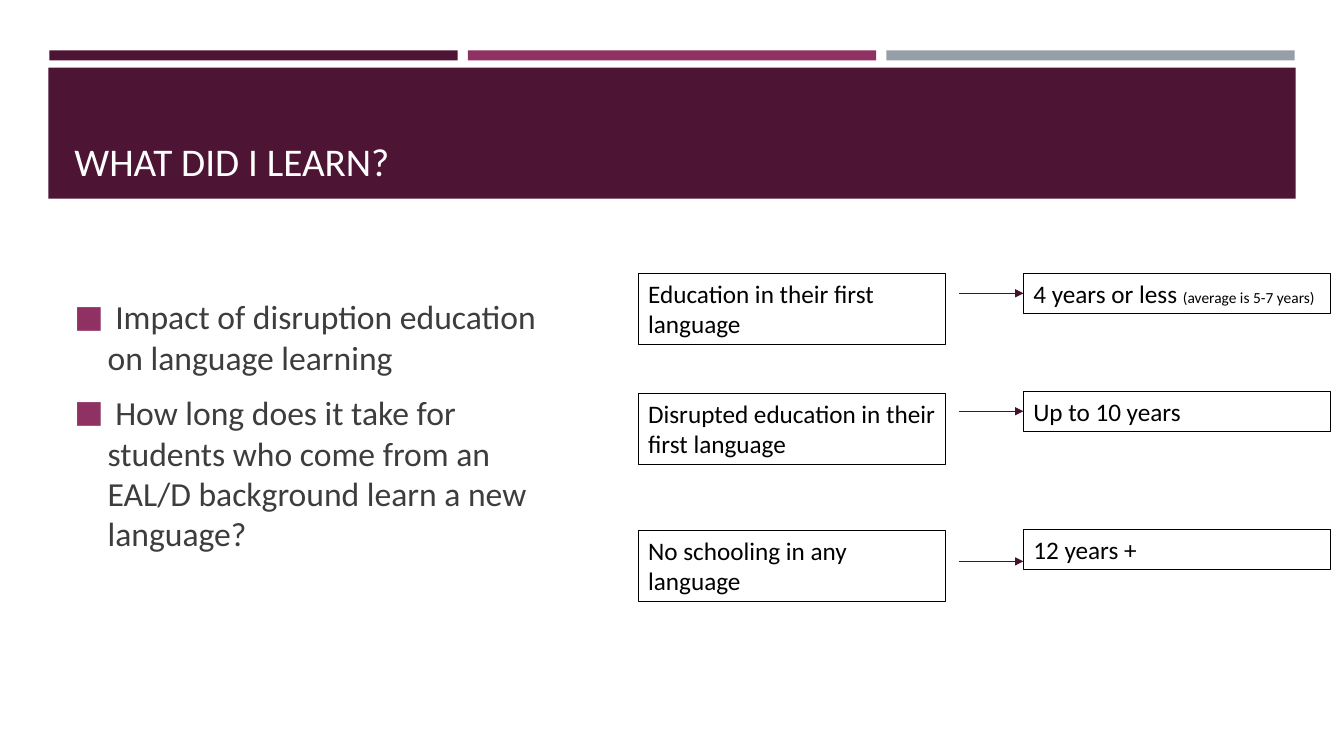
from lxml.etree import SubElement
from pptx import Presentation
from pptx.dml.color import RGBColor
from pptx.enum.shapes import MSO_CONNECTOR, MSO_SHAPE
from pptx.enum.text import MSO_ANCHOR, MSO_AUTO_SIZE, PP_ALIGN
from pptx.oxml.ns import qn
from pptx.util import Inches, Pt

FONT = "Calibri"
COLORS = {
    "plum": "4D1434",
    "magenta": "903163",
    "gray": "969FA7",
    "arrow": "45122F",
    "body": "3D3D3D",
    "black": "000000",
    "white": "FFFFFF",
}
STRIPES = ["plum", "magenta", "gray"]
BULLETS = [
    " Impact of disruption education on language learning",
    " How long does it take for students who come from an EAL/D background learn a new language?",
]
ROWS = [
    (2.71, "Education in their first language", 2.71,
     [("4 years or less ", 18), ("(average is 5-7 years)", 11)], 2.91),
    (3.9, "Disrupted education in their first language", 3.88,
     [("Up to 10 years", 18)], 4.08),
    (5.26, "No schooling in any language", 5.25, [("12 years +", 18)], 5.57),
]


def rgb(name):
    return RGBColor.from_string(COLORS[name])


def add_run(p, text, size, color):
    r = p.add_run()
    r.text = text
    r.font.name = FONT
    r.font.size = Pt(size)
    r.font.color.rgb = rgb(color)


def add_bar(s, x, y, w, h, color):
    sp = s.shapes.add_shape(MSO_SHAPE.RECTANGLE, Inches(x), Inches(y), Inches(w), Inches(h))
    sp.shadow.inherit = False
    sp.fill.solid()
    sp.fill.fore_color.rgb = rgb(color)
    sp.line.fill.background()


def add_text_area(s, x, y, w, h, anchor):
    tf = s.shapes.add_textbox(Inches(x), Inches(y), Inches(w), Inches(h)).text_frame
    tf.word_wrap = True
    tf.auto_size = MSO_AUTO_SIZE.NONE
    tf.vertical_anchor = anchor
    return tf


def add_bullet(p, text):
    p.space_before = Pt(4.8)
    p.space_after = Pt(6)
    pPr = p._p.get_or_add_pPr()
    pPr.set("marL", str(Inches(0.33)))
    pPr.set("indent", str(-Inches(0.33)))
    color = SubElement(pPr, qn("a:buClr"))
    SubElement(color, qn("a:srgbClr"), val=COLORS["magenta"])
    SubElement(pPr, qn("a:buSzPct"), val="92000")
    SubElement(pPr, qn("a:buFont"), typeface=FONT)
    SubElement(pPr, qn("a:buChar"), char="■")
    add_run(p, text, 24, "body")


def add_box(s, x, y, h, runs):
    sp = s.shapes.add_shape(MSO_SHAPE.RECTANGLE, Inches(x), Inches(y), Inches(3.05), Inches(h))
    sp.shadow.inherit = False
    sp.fill.background()
    sp.line.color.rgb = rgb("black")
    sp.line.width = Pt(0.75)
    tf = sp.text_frame
    tf.word_wrap = True
    tf.auto_size = MSO_AUTO_SIZE.SHAPE_TO_FIT_TEXT
    tf.vertical_anchor = MSO_ANCHOR.TOP
    p = tf.paragraphs[0]
    p.alignment = PP_ALIGN.LEFT
    for text, size in runs:
        add_run(p, text, size, "black")
    return sp


def add_arrow(s, y):
    line = s.shapes.add_connector(
        MSO_CONNECTOR.STRAIGHT, Inches(9.51), Inches(y), Inches(10.15), Inches(y))
    line.line.color.rgb = rgb("arrow")
    line.line.width = Pt(1)
    SubElement(line.line._get_or_add_ln(), qn("a:tailEnd"), type="triangle")
    SubElement(line._element.spPr, qn("a:effectLst"))
    return line


def main():
    prs = Presentation()
    prs.slide_width = Inches(13.33)
    prs.slide_height = Inches(7.5)
    s = prs.slides.add_slide(prs.slide_layouts[6])

    for i, color in enumerate(STRIPES):
        add_bar(s, 0.49 + 4.15 * i, 0.5, 4.05, 0.1, color)
    add_bar(s, 0.48, 0.67, 12.37, 1.3, "plum")

    title = add_text_area(s, 0.64, 0.77, 12.06, 1.11, MSO_ANCHOR.BOTTOM)
    add_run(title.paragraphs[0], "WHAT DID I LEARN?", 28, "white")

    body = add_text_area(s, 0.64, 2.02, 4.93, 4.39, MSO_ANCHOR.MIDDLE)
    for i, text in enumerate(BULLETS):
        add_bullet(body.add_paragraph() if i else body.paragraphs[0], text)

    for cause_y, cause, time_y, time_runs, arrow_y in ROWS:
        add_box(s, 6.33, cause_y, 0.71, [(cause, 18)])
        time_box = add_box(s, 10.15, time_y, 0.4, time_runs)
        arrow = add_arrow(s, arrow_y)
        if abs(time_y + 0.2 - arrow_y) < 0.01:
            arrow.end_connect(time_box, 1)

    prs.save("out.pptx")


if __name__ == "__main__":
    main()
